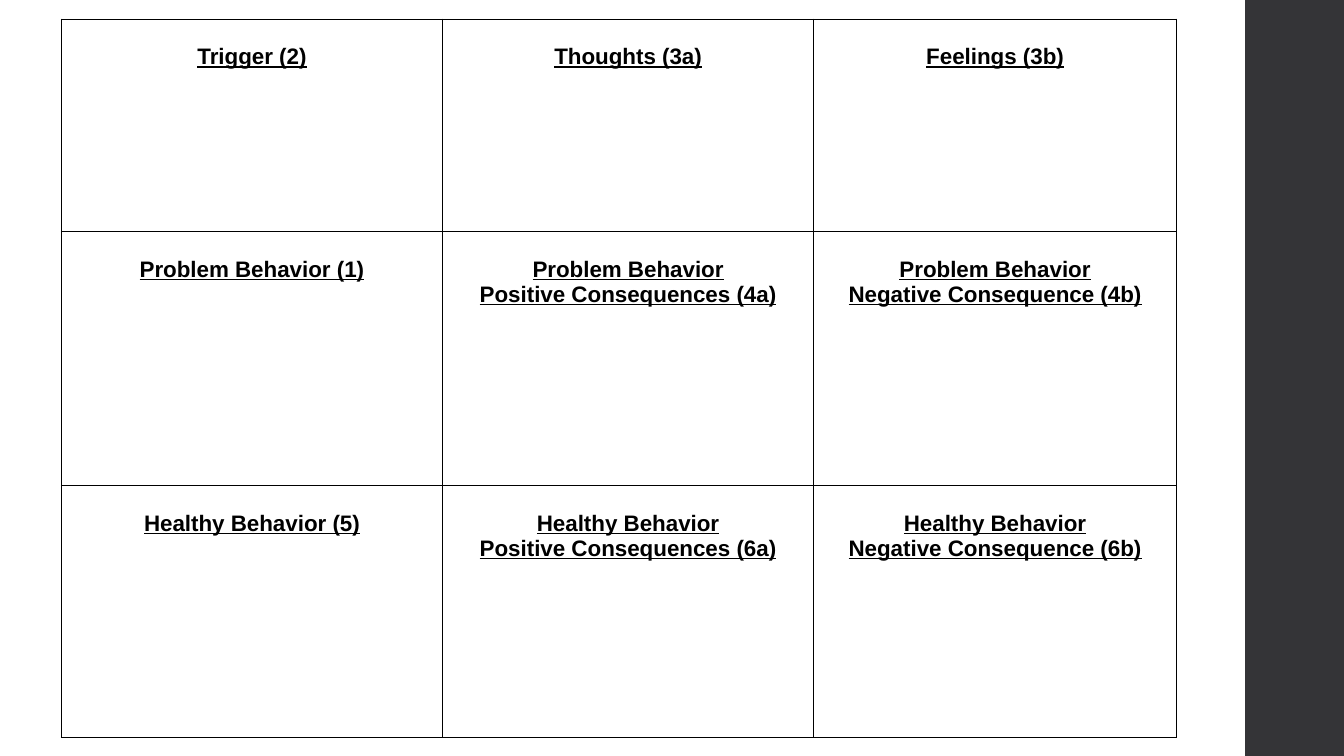
import pptx
import pptx.util
import pptx.dml.color
import pptx.enum.shapes
import pptx.enum.text
import pptx.oxml
import pptx.oxml.ns

Inches = pptx.util.Inches
COLORS = {"paper": "FFFFFF", "ink": "000000", "side_band": "343437"}


def rgb(name):
    return pptx.dml.color.RGBColor.from_string(COLORS[name])


def add_borders(cell):
    properties = cell._tc.get_or_add_tcPr()
    for position, side in enumerate(("lnL", "lnR", "lnT", "lnB")):
        border = pptx.oxml.parse_xml(
            f'<a:{side} {pptx.oxml.ns.nsdecls("a")} w="12700"><a:solidFill>'
            f'<a:srgbClr val="{COLORS["ink"]}"/></a:solidFill></a:{side}>')
        properties.insert(position, border)


presentation = pptx.Presentation()
presentation.slide_width = Inches(13.33)
presentation.slide_height = Inches(7.5)
slide = presentation.slides.add_slide(presentation.slide_layouts[6])
slide.background.fill.solid()
slide.background.fill.fore_color.rgb = rgb("paper")

# Dark band along the right edge
side_band = slide.shapes.add_shape(
    pptx.enum.shapes.MSO_SHAPE.RECTANGLE,
    Inches(12.35), 0, Inches(0.98), Inches(7.5))
side_band.shadow.inherit = False
side_band.fill.solid()
side_band.fill.fore_color.rgb = rgb("side_band")
side_band.line.fill.background()

# Behavior worksheet: one row per stage
worksheet_headings = [
    ["Trigger (2)", "Thoughts (3a)", "Feelings (3b)"],
    ["Problem Behavior (1)",
     "Problem Behavior\nPositive Consequences (4a)",
     "Problem Behavior\nNegative Consequence (4b)"],
    ["Healthy Behavior (5)",
     "Healthy Behavior\nPositive Consequences (6a)",
     "Healthy Behavior\nNegative Consequence (6b)"],
]
column_widths = [3.78, 3.68, 3.6]
row_heights = [2.11, 2.52, 2.5]

worksheet = slide.shapes.add_table(
    len(row_heights), len(column_widths), Inches(0.61), Inches(0.19),
    Inches(sum(column_widths)), Inches(sum(row_heights))).table
worksheet.first_row = False
worksheet.horz_banding = False
for column, width in zip(worksheet.columns, column_widths):
    column.width = Inches(width)
for row, height in zip(worksheet.rows, row_heights):
    row.height = Inches(height)

# Headings sit one line below the top of each cell
for row, headings in zip(worksheet.rows, worksheet_headings):
    for cell, heading in zip(row.cells, headings):
        cell.margin_left = cell.margin_right = Inches(0.04)
        cell.margin_top = Inches(0.25)
        cell.margin_bottom = 0
        cell.fill.solid()
        cell.fill.fore_color.rgb = rgb("paper")
        add_borders(cell)
        cell.text_frame.text = heading
        for paragraph in cell.text_frame.paragraphs:
            paragraph.alignment = pptx.enum.text.PP_ALIGN.CENTER
            font = paragraph.runs[0].font
            font.name = "Arial"
            font.size = pptx.util.Pt(16)
            font.bold = True
            font.underline = True
            font.color.rgb = rgb("ink")

presentation.save("out.pptx")
